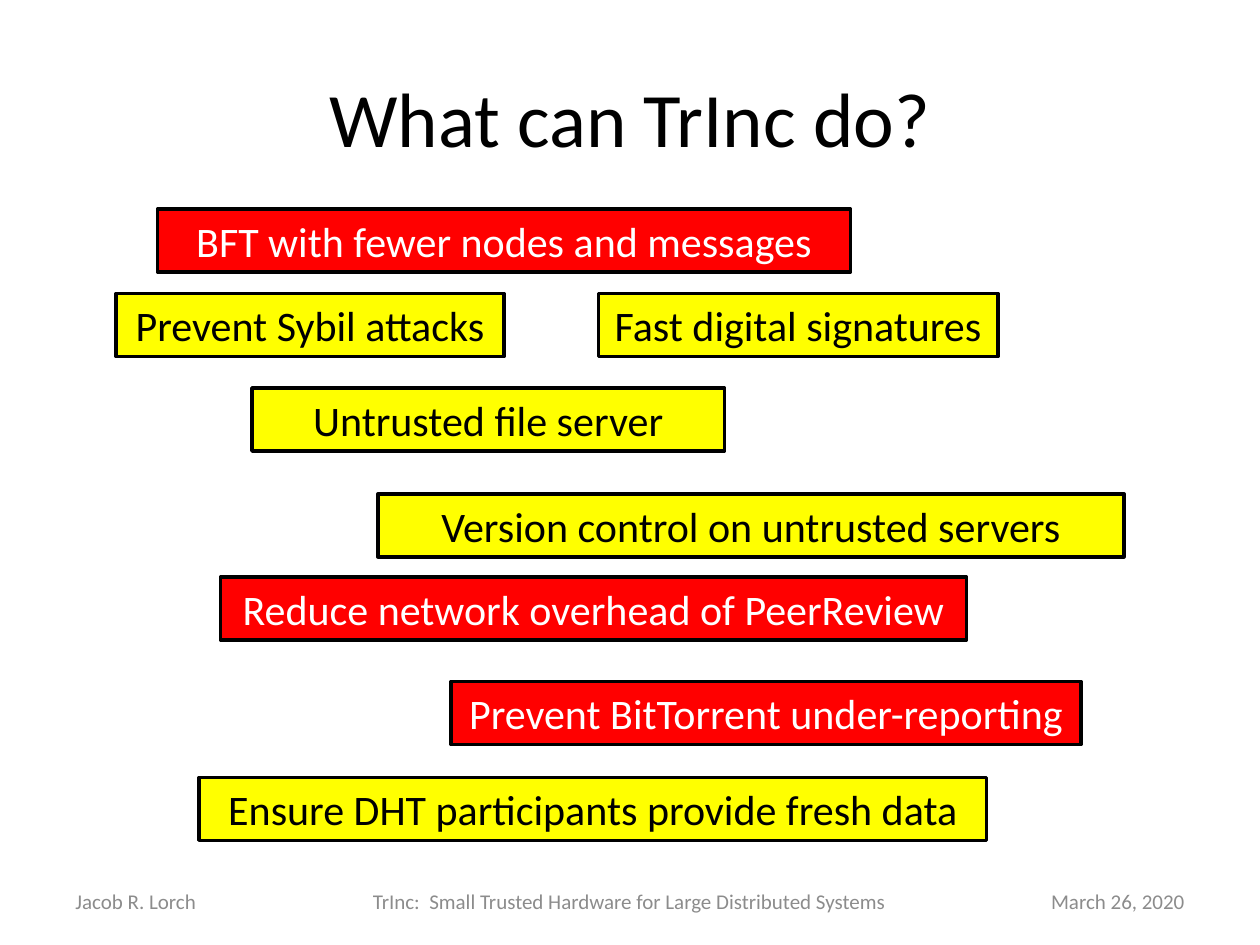
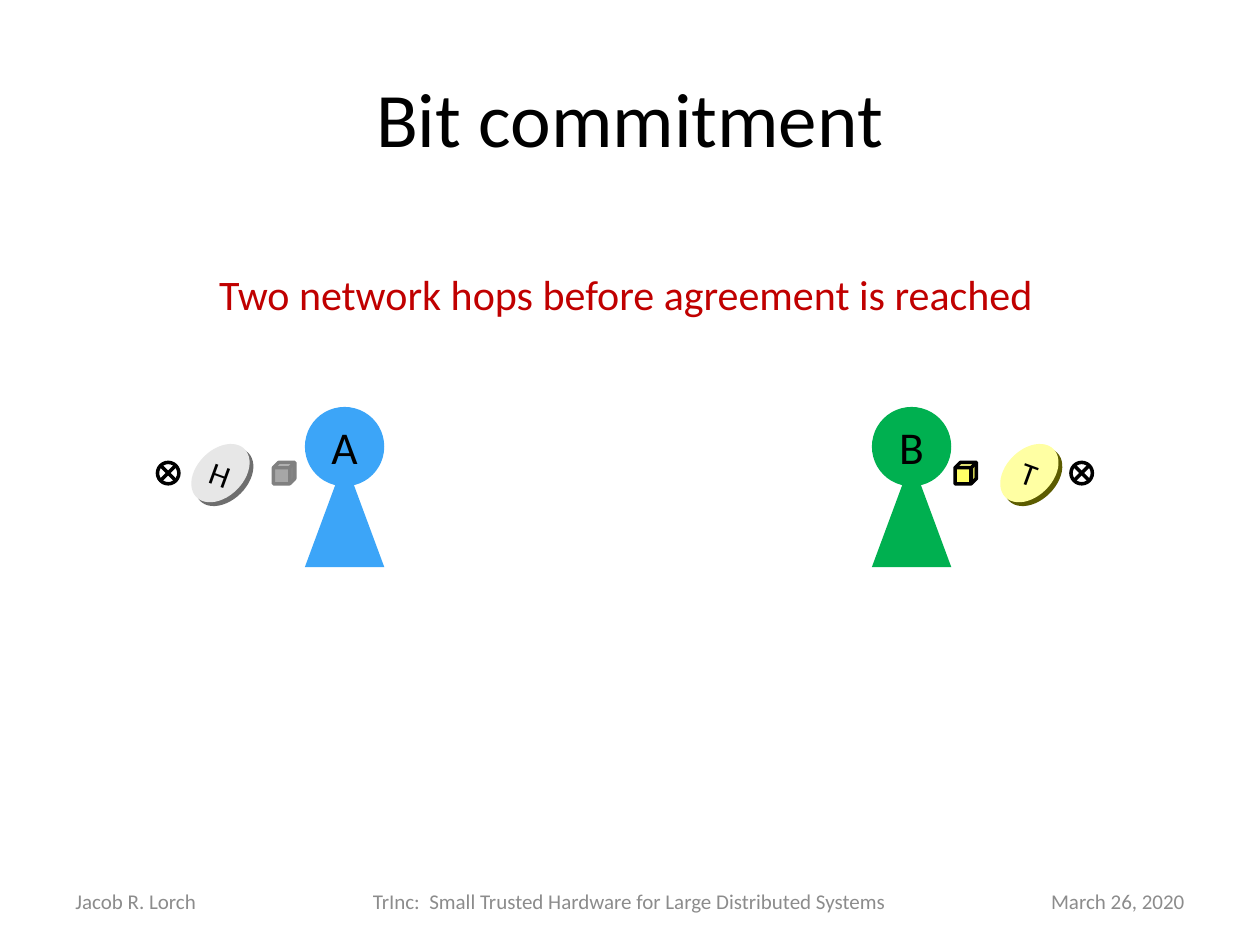
from pptx import Presentation
from pptx.dml.color import RGBColor as RGB
from pptx.enum.shapes import MSO_SHAPE as Form
from pptx.enum.text import MSO_ANCHOR as Anchor, PP_ALIGN as Align
from pptx.util import Inches, Pt

BLACK, WHITE, GREY = "000000", "FFFFFF", "8C8C8C"
RED, YELLOW, PALE = "FF0000", "FFFF00", "FFFF66"
BLUE, GREEN, CRIMSON = "3CA5F8", "00B050", "C00000"


def color(code):
    return RGB.from_string(code)


def assign(target, values):
    for name, value in values.items():
        setattr(target, name, value)


class Deck:
    font = "Calibri"
    frame = {"vertical_anchor": Anchor.MIDDLE, "word_wrap": True}
    bare = dict.fromkeys(
        ("margin_left", "margin_top", "margin_right", "margin_bottom"), 0)
    footers = (
        (0.5, 2.33, "Jacob R. Lorch", Align.LEFT),
        (2.83, 4.33, "TrInc:  Small Trusted Hardware for Large Distributed Systems",
         Align.CENTER),
        (7.17, 2.33, "March 26, 2020", Align.RIGHT),
    )

    def __init__(self):
        self.show = Presentation()
        assign(self.show, {"slide_width": Inches(10), "slide_height": Inches(7.5)})

    def page(self, title):
        self.slide = self.show.slides.add_slide(self.show.slide_layouts[6])
        self.shapes = self.slide.shapes
        self.label(title, (0.5, 0.3, 9, 1.25), 44)
        for left, width, words, align in self.footers:
            self.label(words, (left, 6.95, width, 0.4), 12, GREY, align)

    def letter(self, shape, words, size, ink, align=Align.CENTER, **extra):
        text = shape.text_frame
        assign(text, {**self.frame, **extra})
        line = text.paragraphs[0]
        line.alignment = align
        run = line.add_run()
        run.text = words
        assign(run.font, {"name": self.font, "size": Pt(size)})
        run.font.color.rgb = color(ink)

    def label(self, words, at, size, ink=BLACK, align=Align.CENTER, turn=0, **extra):
        box = self.shapes.add_textbox(*map(Inches, at))
        box.rotation = turn
        self.letter(box, words, size, ink, align, **extra)

    def form(self, kind, at, fill=None, edge=None, turn=0, home=None):
        shape = (home or self.shapes).add_shape(kind, *map(Inches, at))
        shape.shadow.inherit = False
        shape.rotation = turn
        if fill:
            shape.fill.solid()
            shape.fill.fore_color.rgb = color(fill)
        else:
            shape.fill.background()
        if edge:
            shape.line.color.rgb = color(edge)
            shape.line.width = Pt(2)
        else:
            shape.line.fill.background()
        return shape

    def claim(self, words, left, top, width, fill, ink):
        box = self.form(Form.RECTANGLE, (left, top, width, 0.5), fill, BLACK)
        self.letter(box, words, 24, ink, word_wrap=False)

    def person(self, name, left, fill):
        home = self.shapes.add_group_shape().shapes
        self.form(Form.ISOSCELES_TRIANGLE, (left, 3.65, 0.63, 0.85), fill, home=home)
        head = self.form(Form.OVAL, (left, 3.23, 0.63, 0.63), fill, home=home)
        self.letter(head, name, 26, BLACK, **self.bare)

    def coin(self, face, left, fill, rim):
        for shift, tint in ((0.03, rim), (0, fill)):
            self.form(Form.OVAL, (left - 0.02 + shift, 3.57 + shift, 0.54, 0.37),
                      tint, turn=-45)
        self.label(face, (left, 3.51, 0.5, 0.5), 18, turn=20, **self.bare)

    def mark(self, kind, left, fill=None, edge=BLACK):
        self.form(kind, (left, 3.67, 0.17, 0.17), fill, edge)


def main():
    deck = Deck()
    deck.page("What can TrInc do?")
    hot, warm = (RED, WHITE), (YELLOW, BLACK)
    for words, left, top, width, tone in (
        ("BFT with fewer nodes and messages", 1.25, 1.66, 5.5, hot),
        ("Prevent Sybil attacks", 0.92, 2.33, 3.08, warm),
        ("Fast digital signatures", 4.75, 2.33, 3.17, warm),
        ("Untrusted file server", 2, 3.08, 3.75, warm),
        ("Version control on untrusted servers", 3, 3.92, 5.92, warm),
        ("Reduce network overhead of PeerReview", 1.75, 4.58, 5.92, hot),
        ("Prevent BitTorrent under-reporting", 3.58, 5.41, 5, hot),
        ("Ensure DHT participants provide fresh data", 1.58, 6.17, 6.25, warm),
    ):
        deck.claim(words, left, top, width, *tone)

    deck.page("Bit commitment")
    deck.person("A", 2.42, BLUE)
    deck.person("B", 6.92, GREEN)
    deck.mark(Form.CUBE, 2.17, "A6A6A6", "808080")
    deck.mark(Form.CUBE, 7.58, PALE)
    deck.coin("H", 1.5, "E7E7E7", "6E6E6E")
    deck.coin("T", 7.92, "FFFFA3", "5C5C00")
    for left in (1.25, 8.5):
        deck.mark(Form.FLOWCHART_SUMMING_JUNCTION, left)
    deck.label("Two network hops before agreement is reached",
               (1.64, 2.08, 6.72, 0.5), 24, CRIMSON, Align.LEFT, word_wrap=False)
    deck.show.save("out.pptx")


if __name__ == "__main__":
    main()
